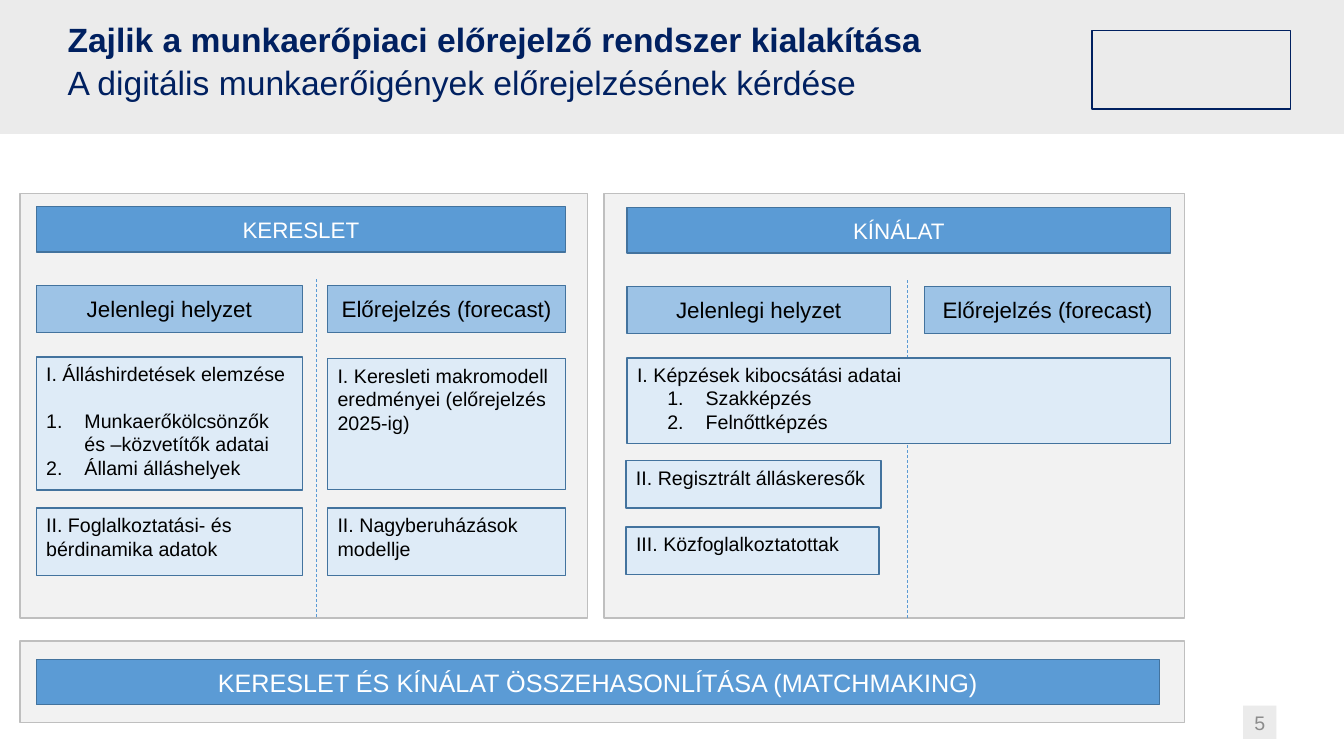
from dataclasses import dataclass

from lxml import etree
from pptx import Presentation
from pptx.dml.color import RGBColor
from pptx.enum.dml import MSO_LINE
from pptx.enum.shapes import MSO_CONNECTOR, MSO_SHAPE
from pptx.enum.text import MSO_ANCHOR, PP_ALIGN
from pptx.oxml.ns import qn
from pptx.util import Inches, Pt

RECT = MSO_SHAPE.RECTANGLE
STRAIGHT = MSO_CONNECTOR.STRAIGHT
DASH = MSO_LINE.DASH
LEFT, CENTER = PP_ALIGN.LEFT, PP_ALIGN.CENTER
TOP, MIDDLE = MSO_ANCHOR.TOP, MSO_ANCHOR.MIDDLE

FONT = "Arial"
COLORS = {
    "navy": "002060",
    "band": "EBEBEB",
    "number": "8C8C8C",
    "panel": "F2F2F2",
    "panel_edge": "BFBFBF",
    "header": "5B9BD5",
    "column": "9DC3E6",
    "card": "DEEBF7",
    "edge": "43739E",
    "white": "FFFFFF",
    "black": "000000",
}


@dataclass
class Bar:
    left: float
    top: float
    width: float
    height: float
    text: str
    fill: str
    size: int = 16
    color: str = "black"


@dataclass
class Card:
    left: float
    top: float
    width: float
    height: float
    text: str
    items: tuple[str, ...] = ()
    indent: float = 0.38
    gap: float = 0


PANELS = [
    (0.2, 1.92, 5.63, 4.21),
    (5.99, 1.92, 5.76, 4.21),
    (0.2, 6.36, 11.55, 0.81),
]
DIVIDERS = [(3.14, 2.77), (9, 2.78)]
DIVIDER_LENGTH = 3.35

BARS = [
    Bar(0.36, 2.05, 5.25, 0.45, "KERESLET", "header", color="white"),
    Bar(6.22, 2.06, 5.39, 0.45, "KÍNÁLAT", "header", color="white"),
    Bar(0.36, 2.83, 2.64, 0.47, "Jelenlegi helyzet", "column"),
    Bar(3.25, 2.83, 2.36, 0.47, "Előrejelzés (forecast)", "column"),
    Bar(6.22, 2.84, 2.61, 0.47, "Jelenlegi helyzet", "column"),
    Bar(9.17, 2.84, 2.44, 0.47, "Előrejelzés (forecast)", "column"),
    Bar(0.36, 6.54, 11.14, 0.45,
        "KERESLET ÉS KÍNÁLAT ÖSSZEHASONLÍTÁSA (MATCHMAKING)", "header", 18, "white"),
]
CARDS = [
    Card(0.36, 3.54, 2.64, 1.32, "I. Álláshirdetések elemzése",
         ("Munkaerőkölcsönzők és –közvetítők adatai", "Állami álláshelyek"), gap=16.5),
    Card(0.36, 5.04, 2.64, 0.67, "II. Foglalkoztatási- és bérdinamika adatok"),
    Card(3.25, 3.56, 2.36, 1.3,
         "I. Keresleti makromodell eredményei (előrejelzés 2025-ig)"),
    Card(3.25, 5.04, 2.36, 0.67, "II. Nagyberuházások modellje"),
    Card(6.22, 3.55, 5.39, 0.85, "I. Képzések kibocsátási adatai",
         ("Szakképzés", "Felnőttképzés"), indent=0.68),
    Card(6.21, 4.57, 2.53, 0.47, "II. Regisztrált álláskeresők"),
    Card(6.21, 5.23, 2.51, 0.47, "III. Közfoglalkoztatottak"),
]


def rgb(name: str) -> RGBColor:
    return RGBColor.from_string(COLORS[name])


def add_text(p, text: str, *, size: int = 14, color: str = "black",
             bold: bool = False, align=LEFT) -> None:
    p.alignment = align
    r = p.add_run()
    r.text = text
    r.font.name = FONT
    r.font.size = Pt(size)
    r.font.bold = bold
    r.font.color.rgb = rgb(color)


def number_paragraph(p, indent: float) -> None:
    pPr = p._p.get_or_add_pPr()
    pPr.set("marL", str(Inches(indent)))
    pPr.set("indent", str(-Inches(0.38)))
    etree.SubElement(pPr, qn("a:buFont")).set("typeface", "+mj-lt")
    etree.SubElement(pPr, qn("a:buAutoNum")).set("type", "arabicPeriod")


def add_box(s, left: float, top: float, width: float, height: float,
            fill: str | None = None, edge: str | None = None):
    sp = s.shapes.add_shape(RECT, Inches(left), Inches(top), Inches(width), Inches(height))
    sp.shadow.inherit = False
    if fill:
        sp.fill.solid()
        sp.fill.fore_color.rgb = rgb(fill)
    else:
        sp.fill.background()
    if edge:
        sp.line.color.rgb = rgb(edge)
        sp.line.width = Pt(1)
    else:
        sp.line.fill.background()
    sp.text_frame.word_wrap = True
    return sp


def add_divider(s, x: float, top: float) -> None:
    line = s.shapes.add_connector(
        STRAIGHT, Inches(x), Inches(top), Inches(x), Inches(top + DIVIDER_LENGTH))
    line.line.color.rgb = rgb("header")
    line.line.width = Pt(0.5)
    line.line.dash_style = DASH
    etree.SubElement(line._element.spPr, qn("a:effectLst"))


def add_bar(s, bar: Bar) -> None:
    tf = add_box(s, bar.left, bar.top, bar.width, bar.height, bar.fill, "edge").text_frame
    tf.vertical_anchor = MIDDLE
    add_text(tf.paragraphs[0], bar.text, size=bar.size, color=bar.color, align=CENTER)


def add_card(s, card: Card) -> None:
    tf = add_box(s, card.left, card.top, card.width, card.height, "card", "edge").text_frame
    tf.vertical_anchor = TOP
    add_text(tf.paragraphs[0], card.text)
    for i, item in enumerate(card.items):
        p = tf.add_paragraph()
        number_paragraph(p, card.indent)
        if i == 0 and card.gap:
            p.space_before = Pt(card.gap)
        add_text(p, item)


def add_title(s) -> None:
    tf = s.shapes.add_textbox(Inches(0.67), Inches(0.17), Inches(10.17), Inches(1)).text_frame
    tf.word_wrap = True
    tf.margin_left = tf.margin_right = tf.margin_top = tf.margin_bottom = 0
    p = tf.paragraphs[0]
    p.line_spacing = 1.05
    add_text(p, "Zajlik a munkaerőpiaci előrejelző rendszer kialakítása",
             size=24, color="navy", bold=True)
    p.add_line_break()
    add_text(p, "A digitális munkaerőigények előrejelzésének kérdése", size=24, color="navy")


def add_page_number(s) -> None:
    tf = add_box(s, 12.33, 7, 0.33, 0.33, "band").text_frame
    tf.margin_left = tf.margin_right = tf.margin_top = tf.margin_bottom = 0
    tf.vertical_anchor = MIDDLE
    add_text(tf.paragraphs[0], "5", color="number", align=CENTER)


def main() -> None:
    prs = Presentation()
    prs.slide_width, prs.slide_height = Inches(13.33), Inches(7.5)
    s = prs.slides.add_slide(prs.slide_layouts[6])
    add_box(s, 0, 0, 13.33, 1.33, "band")
    add_title(s)
    add_box(s, 10.83, 0.3, 1.97, 0.78, edge="navy")
    add_page_number(s)
    for panel in PANELS:
        add_box(s, *panel, "panel", "panel_edge")
    for x, top in DIVIDERS:
        add_divider(s, x, top)
    for bar in BARS:
        add_bar(s, bar)
    for card in CARDS:
        add_card(s, card)
    prs.save("out.pptx")


if __name__ == "__main__":
    main()
